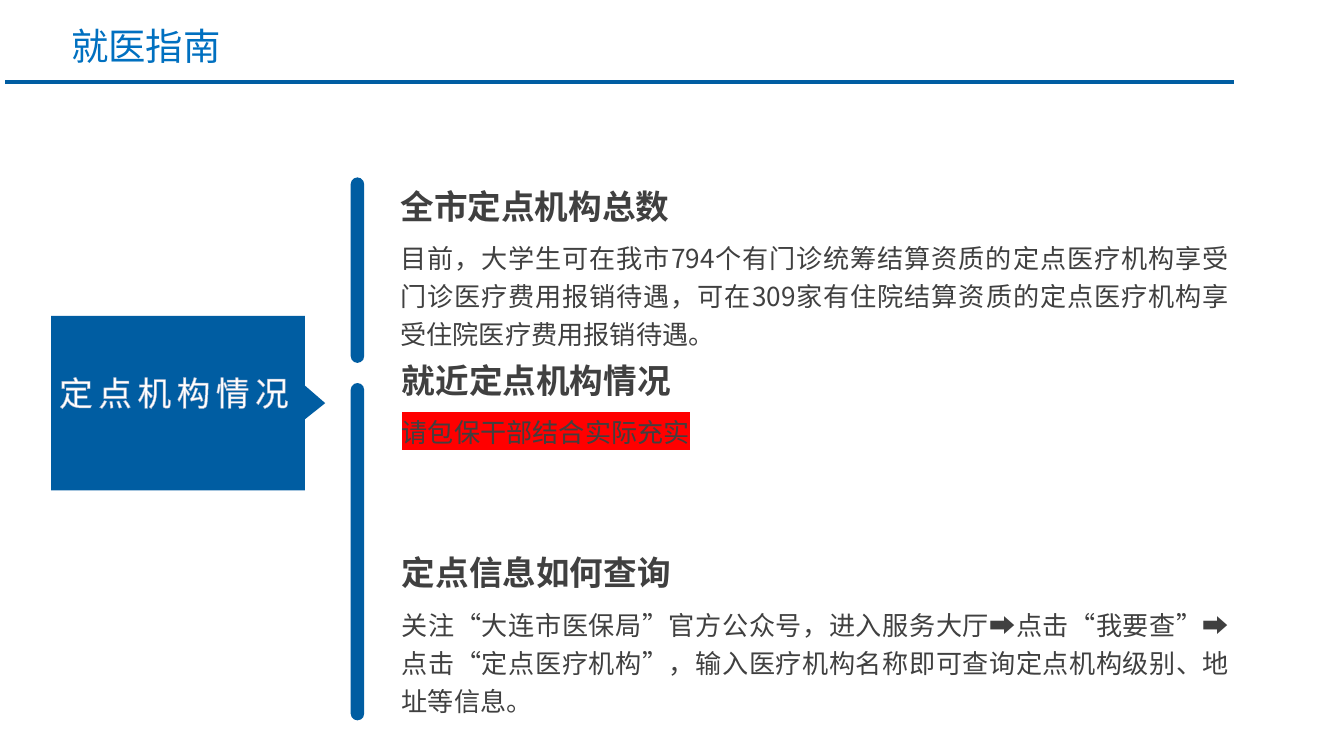
from lxml import etree
from pptx import Presentation
from pptx.dml.color import RGBColor
from pptx.enum.shapes import MSO_CONNECTOR, MSO_SHAPE
from pptx.enum.text import PP_ALIGN
from pptx.oxml.ns import qn
from pptx.util import Inches, Pt

FONT = "Noto Sans CJK SC"
BLUE = RGBColor(0x00, 0x5D, 0xA2)
TITLE_BLUE = RGBColor(0x00, 0x70, 0xC0)
GREY = RGBColor(0x40, 0x40, 0x40)
WHITE = RGBColor(0xFF, 0xFF, 0xFF)
RED = RGBColor(0xFF, 0x00, 0x00)
OUTLINE = RGBColor(0xAA, 0xB6, 0xCE)
STRAIGHT = MSO_CONNECTOR.STRAIGHT
BAR = MSO_SHAPE.ROUND_2_SAME_RECTANGLE
CENTER, JUSTIFY = PP_ALIGN.CENTER, PP_ALIGN.JUSTIFY

# Content
TITLE = "就医指南"
LABEL = "定点机构情况"
# heading, its place; body, its place; highlight
SECTIONS = [
    ("全市定点机构总数", (2.94, 1.36, 3.57, 0.64),
     "目前，大学生可在我市794个有门诊统筹结算资质的定点医疗机构享受门诊医疗费用报销待遇，"
     "可在309家有住院结算资质的定点医疗机构享受住院医疗费用报销待遇。",
     (2.94, 1.74, 6.24, 1.29), None),
    ("就近定点机构情况", (2.95, 2.66, 3.46, 0.34),
     "请包保干部结合实际充实",
     (2.95, 3.03, 6.24, 0.5), RED),
    ("定点信息如何查询", (2.95, 4.09, 3.57, 0.34),
     "关注“大连市医保局”官方公众号，进入服务大厅➡点击“我要查”➡点击“定点医疗机构”，"
     "输入医疗机构名称即可查询定点机构级别、地址等信息。",
     (2.95, 4.47, 6.24, 0.88), None),
]
BARS = [(1.32, 1.38), (2.85, 2.51)]  # top, height
TAG_POINTS = [(0.38, 2.35), (2.27, 2.35), (2.27, 2.87), (2.42, 3),
              (2.27, 3.12), (2.27, 3.65), (0.38, 3.65)]

deck = Presentation()
deck.slide_width = Inches(10)
deck.slide_height = deck.slide_width * 9 // 16
page = deck.slides.add_slide(deck.slide_layouts[6])


def add_text(text, place, size, color,
             bold=False, highlight=None, insets=(0.04, 0.02)):
    box = page.shapes.add_textbox(*map(Inches, place))
    frame = box.text_frame
    frame.word_wrap = True
    frame.margin_left = frame.margin_right = Inches(insets[0])
    frame.margin_top = frame.margin_bottom = Inches(insets[1])
    frame.text = text
    para = frame.paragraphs[0]
    span = para.runs[0]
    span.font.size, span.font.bold = Pt(size), bold
    span.font.color.rgb = color
    props = span.font._element
    if highlight is not None:
        mark = etree.SubElement(props, qn("a:highlight"))
        etree.SubElement(mark, qn("a:srgbClr"), val=str(highlight))
    span.font.name = FONT
    etree.SubElement(props, qn("a:ea"), typeface=FONT)
    return para


def paint(shape):
    shape.shadow.inherit = False
    shape.fill.solid()
    shape.fill.fore_color.rgb = BLUE
    shape.line.fill.background()


# Title and rule
rule = page.shapes.add_connector(
    STRAIGHT, Inches(9.18), Inches(0.61), Inches(0.04), Inches(0.61))
rule.line.color.rgb, rule.line.width = BLUE, Pt(2)
etree.SubElement(rule._element.spPr, qn("a:effectLst"))
add_text(TITLE, (0.43, 0.12, 7.95, 0.44), 20, TITLE_BLUE, insets=(0.1, 0.05))

# Vertical bars
for top, height in BARS:
    bar = page.shapes.add_shape(
        BAR, Inches(2.61), Inches(top), Inches(0.1), Inches(height))
    bar.adjustments[0] = bar.adjustments[1] = 0.5
    paint(bar)

# Pointed tag with its label
points = [(Inches(x), Inches(y)) for x, y in TAG_POINTS]
builder = page.shapes.build_freeform(*points[0])
builder.add_line_segments(points[1:], close=True)
paint(builder.convert_to_shape())

label = add_text(LABEL, (0.36, 2.77, 1.87, 0.3), 18, WHITE, insets=(0, 0))
label.alignment = CENTER
label_props = label.runs[0].font._element
label_props.set("spc", "300")
edge = etree.Element(qn("a:ln"), w=str(Pt(0.8)))
edge_fill = etree.SubElement(edge, qn("a:solidFill"))
etree.SubElement(edge_fill, qn("a:srgbClr"), val=str(OUTLINE))
label_props.insert(0, edge)

# Headings and body texts
for heading, heading_place, body, body_place, highlight in SECTIONS:
    para = add_text(body, body_place, 14, GREY, highlight=highlight)
    para.alignment = JUSTIFY
    para.line_spacing, para.space_after = 1.2, Pt(6)
    add_text(heading, heading_place, 18, GREY, bold=True)

deck.save("out.pptx")
